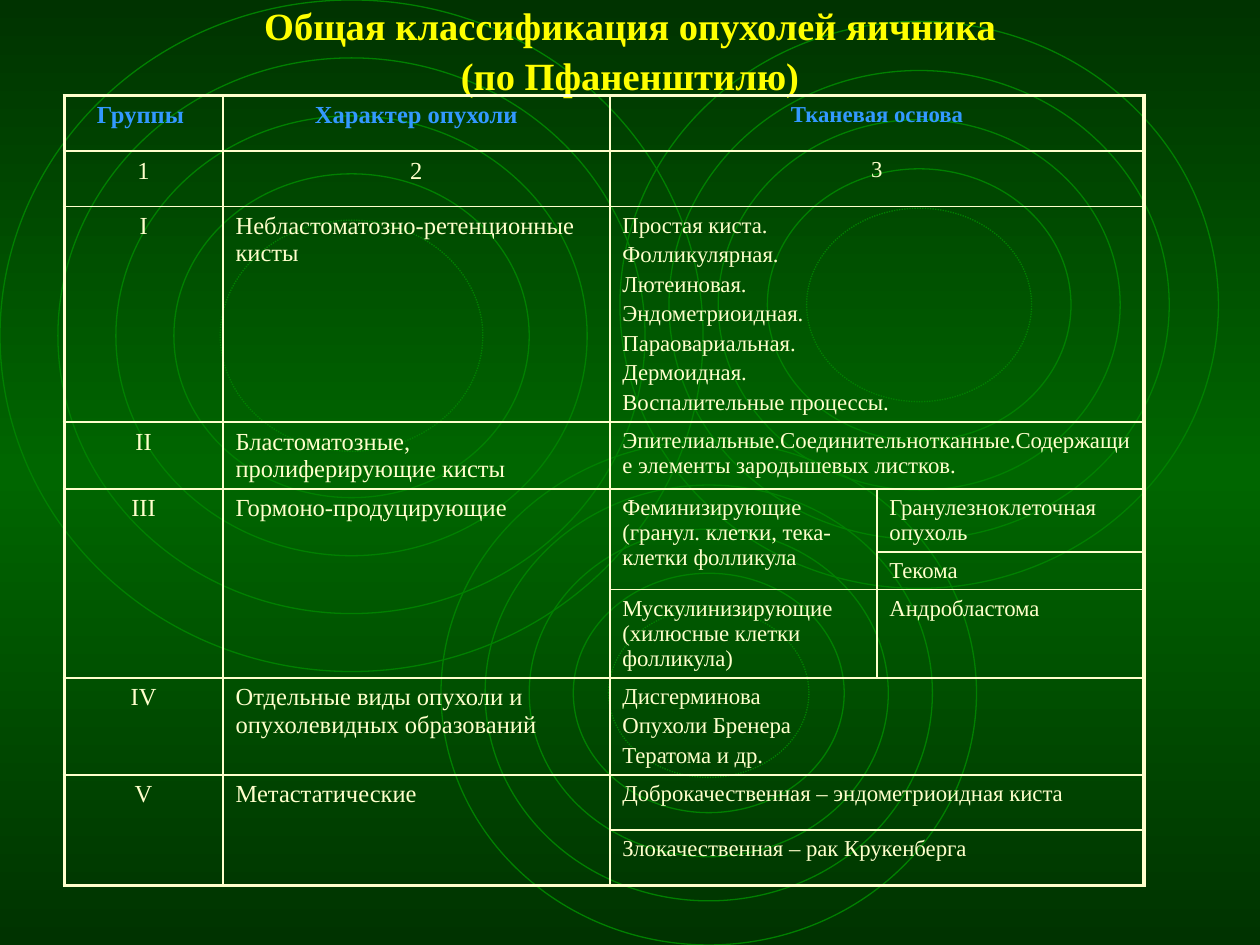
from copy import deepcopy

from lxml import etree
from pptx import Presentation
from pptx.dml.color import RGBColor
from pptx.enum import dml, shapes, text
from pptx.oxml.ns import qn
from pptx.util import Inches, Pt

FONT = "Times New Roman"
CREAM, BLUE, YELLOW = "FFFFCC", "3399FF", "FFFF00"


def paint(color, value):
    color.rgb = RGBColor.from_string(value)


def add_span(para, words, size, color, bold):
    span = para.add_run()
    span.text = words
    span.font.name, span.font.size, span.font.bold = FONT, Pt(size), bold
    paint(span.font.color, color)


deck = Presentation()
deck.slide_width, deck.slide_height = Inches(10), Inches(7.5)
page = deck.slides.add_slide(deck.slide_layouts[5])

# Background: dark green at the top and bottom, lighter in the middle
fill = page.background.fill
fill.gradient()
fill.gradient_angle = 90
stop_list = page.background._cSld.find(".//" + qn("a:gsLst"))
stop_list.append(deepcopy(stop_list[0]))
for stop, position, value in zip(fill.gradient_stops, (0, 0.5, 1), ("003300", "006600", "003300")):
    stop.position = position
    paint(stop.color, value)

# Ripples: each ring is inset by a further step, the innermost is dotted
ripples = [
    (0, 0, 5.58, 5.33, 0.46),
    (3.5, 3.5, 4.25, 4, 0.35),
    (4.92, 0.17, 4.75, 4.5, 0.39),
]
for left, top, width, height, step in ripples:
    for ring in (0, 1, 2, 3, 3.8):
        inset = ring * step
        ellipse = page.shapes.add_shape(
            shapes.MSO_SHAPE.OVAL, Inches(left + inset), Inches(top + inset),
            Inches(width - 2 * inset), Inches(height - 2 * inset))
        ellipse.shadow.inherit = False
        ellipse.fill.background()
        paint(ellipse.line.color, "008000")
        ellipse.line.width = Pt(0.75)
        if ring == 3.8:
            ellipse.line.dash_style = dml.MSO_LINE.ROUND_DOT

# Title, moved in front of the ripples
title = page.shapes.title
page.shapes._spTree.append(title._element)
title.left, title.top = Inches(0.75), Inches(0.07)
title.width, title.height = Inches(8.5), Inches(0.62)
frame = title.text_frame
frame.auto_size = text.MSO_AUTO_SIZE.NONE
frame.vertical_anchor = text.MSO_ANCHOR.MIDDLE
para = frame.paragraphs[0]
para.alignment = text.PP_ALIGN.CENTER
para.line_spacing = 1.1
add_span(para, "Общая классификация опухолей яичника", 22, YELLOW, True)
para.add_line_break()
add_span(para, "(по Пфаненштилю)", 22, YELLOW, True)

# Table grid
columns = [1.26, 3.07, 2.12, 2.12]
rows = [0.44, 0.44, 1.71, 0.53, 0.5, 0.3, 0.7, 0.77, 0.44, 0.44]
table = page.shapes.add_table(
    len(rows), len(columns), Inches(0.51), Inches(0.76),
    Inches(sum(columns)), Inches(sum(rows))).table
table.first_row = table.horz_banding = False
for column, width in zip(table.columns, columns):
    column.width = Inches(width)
for row, height in zip(table.rows, rows):
    row.height = Inches(height)

# Cells: row, column, rows spanned, columns spanned, paragraphs
cells = [
    (0, 0, 1, 1, ["Группы "]),
    (0, 1, 1, 1, ["Характер опухоли"]),
    (0, 2, 1, 2, ["Тканевая основа"]),
    (1, 0, 1, 1, ["1"]),
    (1, 1, 1, 1, ["2"]),
    (1, 2, 1, 2, ["3"]),
    (2, 0, 1, 1, ["I"]),
    (2, 1, 1, 1, ["Небластоматозно-ретенционные кисты"]),
    (2, 2, 1, 2, ["Простая киста.", "Фолликулярная.", "Лютеиновая.", "Эндометриоидная.",
                  "Параовариальная.", "Дермоидная.", "Воспалительные процессы."]),
    (3, 0, 1, 1, ["II"]),
    (3, 1, 1, 1, ["Бластоматозные, пролиферирующие кисты"]),
    (3, 2, 1, 2, ["Эпителиальные.Соединительнотканные.Содержащие элементы зародышевых листков."]),
    (4, 0, 3, 1, ["III"]),
    (4, 1, 3, 1, ["Гормоно-продуцирующие"]),
    (4, 2, 2, 1, ["Феминизирующие (гранул. клетки, тека-клетки фолликула"]),
    (4, 3, 1, 1, ["Гранулезноклеточная опухоль"]),
    (5, 3, 1, 1, ["Текома"]),
    (6, 2, 1, 1, ["Мускулинизирующие (хилюсные клетки фолликула)"]),
    (6, 3, 1, 1, ["Андробластома"]),
    (7, 0, 1, 1, ["IV"]),
    (7, 1, 1, 1, ["Отдельные виды опухоли и опухолевидных образований"]),
    (7, 2, 1, 2, ["Дисгерминова", "Опухоли Бренера", "Тератома и др."]),
    (8, 0, 2, 1, ["V"]),
    (8, 1, 2, 1, ["Метастатические"]),
    (8, 2, 1, 2, ["Доброкачественная – эндометриоидная киста"]),
    (9, 2, 1, 2, ["Злокачественная – рак Крукенберга"]),
]
for first_row, first_column, height, width, lines in cells:
    last_row, last_column = first_row + height - 1, first_column + width - 1
    cell = table.cell(first_row, first_column)
    if height * width > 1:
        cell.merge(table.cell(last_row, last_column))

    # Text
    size = 14 if first_column < 2 else 13
    header = first_row == 0
    for number, line in enumerate(lines):
        para = cell.text_frame.add_paragraph() if number else cell.text_frame.paragraphs[0]
        para.space_before = Pt(size * 0.2)
        if first_row < 2 or first_column == 0:
            para.alignment = text.PP_ALIGN.CENTER
        add_span(para, line, size, BLUE if header else CREAM, header)

    # Borders: heavy around the table, thin inside, none within a merged cell
    for r in range(first_row, last_row + 1):
        for c in range(first_column, last_column + 1):
            part = table.cell(r, c)
            edges = [
                ("a:lnL", c == first_column, first_column == 0),
                ("a:lnR", c == last_column, last_column == len(columns) - 1),
                ("a:lnT", r == first_row, first_row == 0),
                ("a:lnB", r == last_row, last_row == len(rows) - 1),
            ]
            properties = part._tc.get_or_add_tcPr()
            for tag, on_edge, heavy in edges:
                if on_edge or part.is_merge_origin:
                    border = etree.SubElement(properties, qn(tag), w=str(Pt(2.25 if heavy else 1)))
                    solid = etree.SubElement(border, qn("a:solidFill"))
                    etree.SubElement(solid, qn("a:srgbClr"), val=CREAM)
            part.fill.background()

deck.save("out.pptx")
